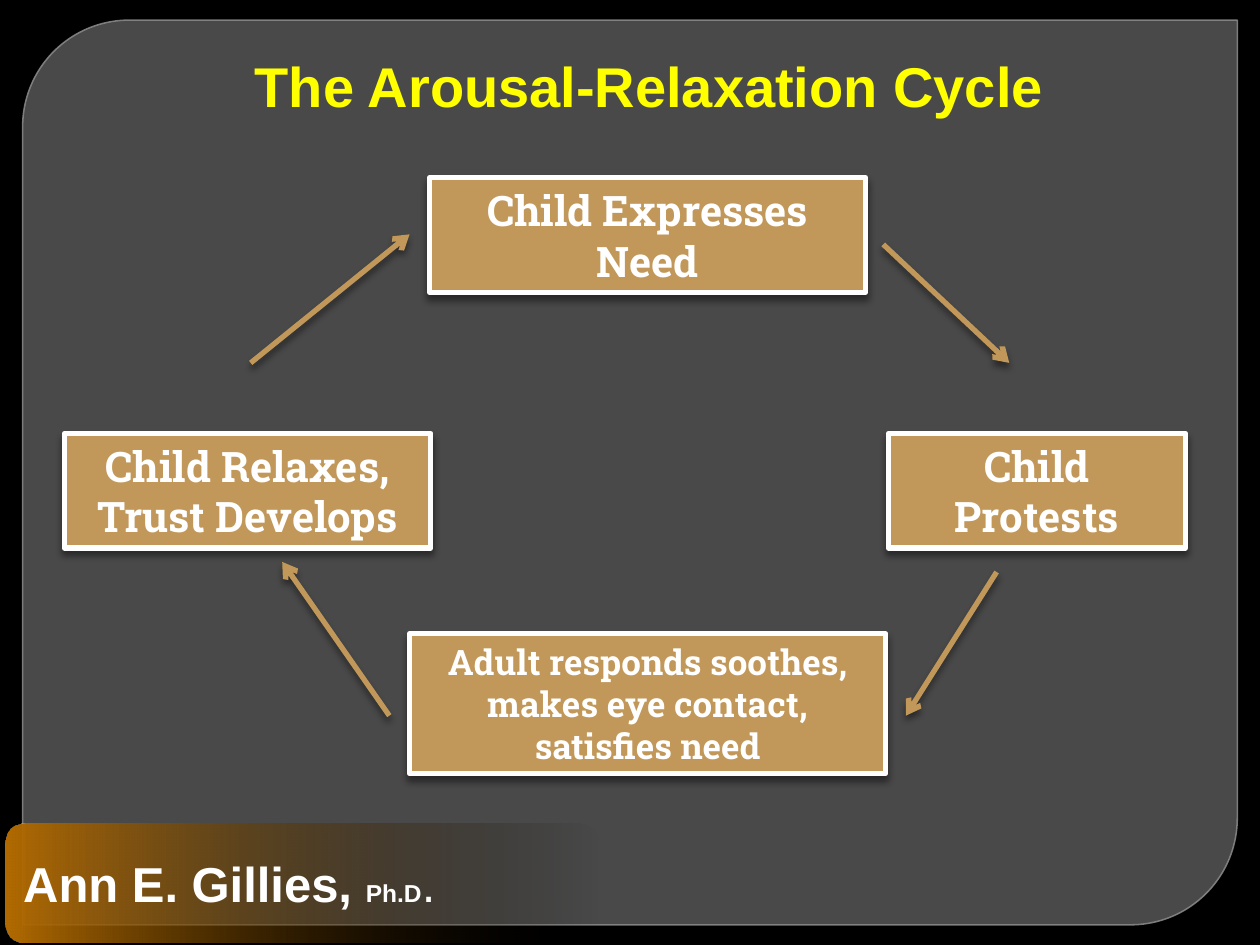
import pptx
import pptx.util
import pptx.dml.color
import pptx.enum.shapes
import pptx.enum.text
import pptx.oxml
import pptx.oxml.ns

COLORS = {
    "background": "000000",
    "panel": "717171",
    "panel_edge": "898989",
    "badge": "B26B02",
    "tan": "C19859",
    "white": "FFFFFF",
    "title": "FFFF00",
}
HEADING_FONT = "Arial"
STEP_FONT = "Roboto Slab"
COLUMNS, ROWS = 100, 75
SHAPES = pptx.enum.shapes.MSO_SHAPE
CENTER = pptx.enum.text.PP_ALIGN.CENTER
MIDDLE = pptx.enum.text.MSO_ANCHOR.MIDDLE


def color(name):
    return pptx.dml.color.RGBColor.from_string(COLORS[name])


def element(markup):
    return pptx.oxml.parse_xml(markup.replace(" ", f' {pptx.oxml.ns.nsdecls("a")} ', 1))


class CycleSlide:
    def __init__(self):
        self.deck = pptx.Presentation()
        self.deck.slide_width = pptx.util.Inches(10)
        self.deck.slide_height = pptx.util.Inches(7.5)
        self.page = self.deck.slides.add_slide(self.deck.slide_layouts[5])
        background = self.page.background.fill
        background.solid()
        background.fore_color.rgb = color("background")

    def place(self, *cells):
        units = (self.deck.slide_width / COLUMNS, self.deck.slide_height / ROWS) * 2
        return [round(cell * unit) for cell, unit in zip(cells, units)]

    def shape(self, kind, cells):
        shape = self.page.shapes.add_shape(kind, *self.place(*cells))
        shape.shadow.inherit = False
        return shape

    def outline(self, line, name, points):
        line.color.rgb = color(name)
        line.width = pptx.util.Pt(points)

    def set_alpha(self, solid_color, percent):
        solid_color.append(element(f'<a:alpha val="{percent * 1000}"/>'))

    def drop_shadow(self, shape):
        properties = shape.element.spPr
        for effects in properties.findall(pptx.oxml.ns.qn("a:effectLst")):
            properties.remove(effects)
        properties.append(element(
            '<a:effectLst ><a:outerShdw blurRad="50800" dist="38100" dir="5400000" rotWithShape="0">'
            '<a:srgbClr val="000000"><a:alpha val="43000"/></a:srgbClr>'
            '</a:outerShdw></a:effectLst>'))

    def style(self, span, font, size, name, bold=True):
        span.font.name = font
        span.font.size = pptx.util.Pt(size)
        span.font.bold = bold
        span.font.color.rgb = color(name)

    def panel(self, cells):
        panel = self.shape(SHAPES.ROUND_2_DIAG_RECTANGLE, cells)
        panel.adjustments[0] = 0.118
        panel.adjustments[1] = 0
        panel.fill.solid()
        panel.fill.fore_color.rgb = color("panel")
        self.outline(panel.line, "panel_edge", 0.87)
        tints = panel.element.spPr.iter(pptx.oxml.ns.qn("a:srgbClr"))
        for tint, percent in zip(tints, (65, 88)):
            self.set_alpha(tint, percent)

    def badge(self, cells, spans):
        badge = self.shape(SHAPES.ROUNDED_RECTANGLE, cells)
        badge.line.fill.background()
        badge.fill.gradient()
        badge.fill.gradient_angle = 0
        for stop, name, position in zip(badge.fill.gradient_stops, ("badge", "background"), (0, 1)):
            stop.color.rgb = color(name)
            stop.position = position
        self.set_alpha(list(badge.element.spPr.iter(pptx.oxml.ns.qn("a:srgbClr")))[-1], 0)
        badge.text_frame.vertical_anchor = MIDDLE
        para = badge.text_frame.paragraphs[0]
        para.alignment = pptx.enum.text.PP_ALIGN.LEFT
        for text, size, bold in spans:
            span = para.add_run()
            span.text = text
            self.style(span, HEADING_FONT, size, "white", bold)

    def step(self, text, cells, size=24):
        box = self.shape(SHAPES.RECTANGLE, cells)
        box.fill.solid()
        box.fill.fore_color.rgb = color("tan")
        self.outline(box.line, "white", 3)
        self.drop_shadow(box)
        box.text_frame.text = text
        box.text_frame.word_wrap = True
        box.text_frame.vertical_anchor = MIDDLE
        for para in box.text_frame.paragraphs:
            para.alignment = CENTER
            for span in para.runs:
                self.style(span, STEP_FONT, size, "white")

    def arrow(self, start, end):
        arrow = self.page.shapes.add_connector(
            pptx.enum.shapes.MSO_CONNECTOR.STRAIGHT, *self.place(*start, *end))
        self.outline(arrow.line, "tan", 3)
        arrow.line._get_or_add_ln().append(element('<a:tailEnd type="arrow"/>'))
        self.drop_shadow(arrow)

    def title(self, text, cells):
        title = self.page.shapes.title
        title.left, title.top, title.width, title.height = self.place(*cells)
        title.text_frame.text = text
        title.text_frame.word_wrap = True
        title.text_frame.vertical_anchor = pptx.enum.text.MSO_ANCHOR.TOP
        para = title.text_frame.paragraphs[0]
        para.alignment = CENTER
        self.style(para.runs[0], HEADING_FONT, 32, "title")
        title.element.getparent().append(title.element)


def main():
    slide = CycleSlide()
    slide.panel((1.8, 1.6, 96.4, 71.8))
    slide.badge((0.4, 65.4, 47.2, 9.4),
                [("Ann E. Gillies, ", 28, True), ("Ph.D", 14, True), (".", 28, False)])
    slide.step("Child Expresses\nNeed", (34.1, 14.1, 34.6, 9.1))
    slide.step("Child Protests", (70.5, 34.4, 23.6, 9.1))
    slide.step("Adult responds soothes, makes eye contact, satisfies need",
               (32.5, 50.3, 37.8, 11.1), size=20)
    slide.step("Child Relaxes, Trust Develops", (5.1, 34.4, 29.1, 9.1))
    for start, end in (
        ((70.1, 19.4), (80.1, 28.8)),
        ((79.1, 45.4), (71.9, 56.8)),
        ((30.9, 56.8), (22.4, 44.6)),
        ((19.9, 28.8), (32.5, 18.6)),
    ):
        slide.arrow(start, end)
    slide.title("The Arousal-Relaxation Cycle", (16.9, 3.6, 69.3, 6.4))
    slide.deck.save("out.pptx")


if __name__ == "__main__":
    main()
